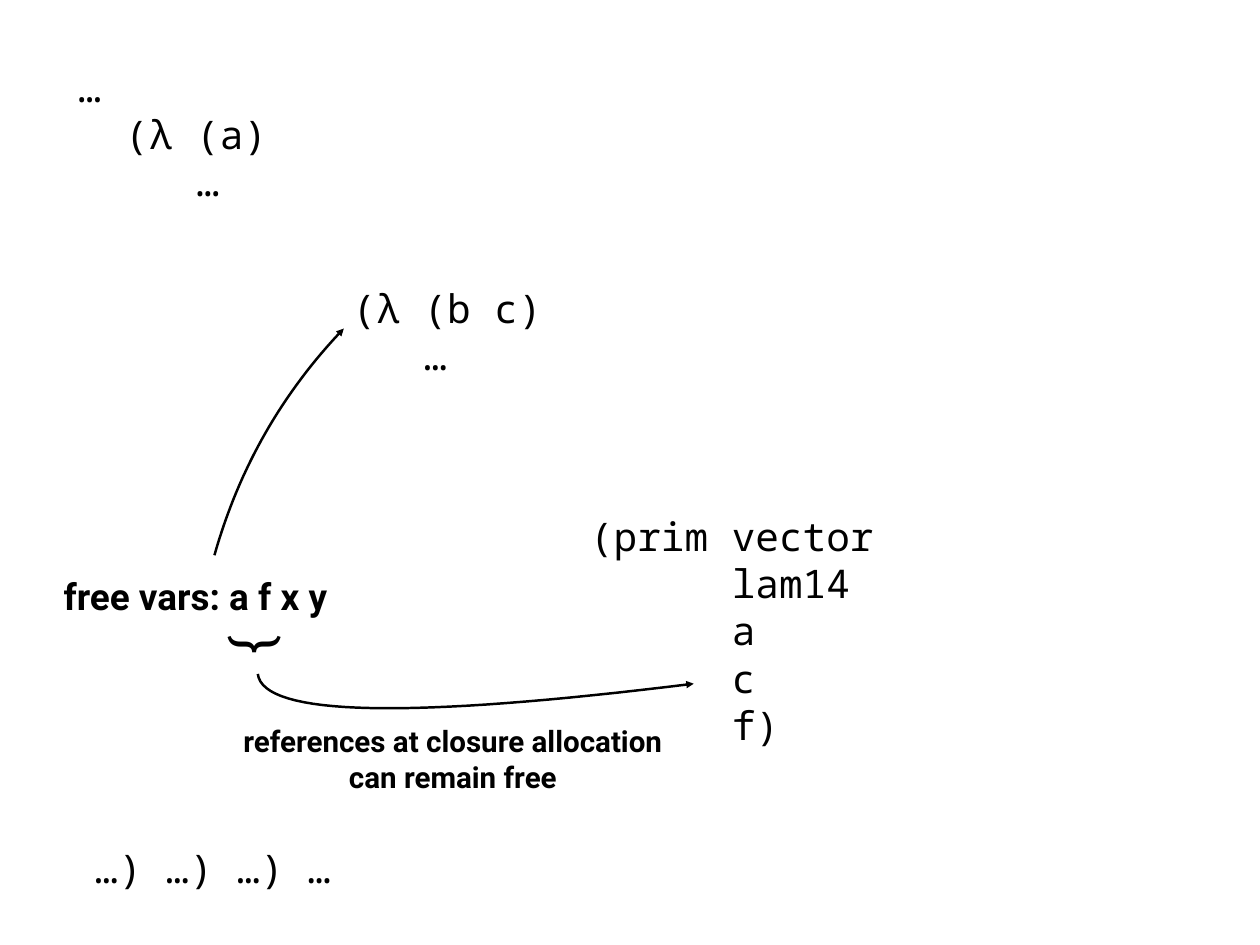
from lxml import etree
from pptx import Presentation, util as u
from pptx.dml.color import RGBColor
from pptx.enum import text
from pptx.oxml.ns import qn

WIDTH, HEIGHT = u.Inches(14.22), u.Inches(10.67)
COLORS = {"ink": "000000", "paper": "FFFFFF"}

FORMATS = {
    "code": {"name": "Noto Sans Mono", "size": u.Pt(32)},
    "label": {"name": "Roboto", "size": u.Pt(30), "bold": True},
    "caption": {"name": "Roboto", "size": u.Pt(24), "bold": True},
    "brace": {"name": "Roboto", "size": u.Pt(45)},
}

# Format, (left, top, width, height) in percent of the slide, rotation, lines
TEXTS = [
    ("code", (5.77, 6.09, 17.79, 15.09), 0, ["…", "  (λ (a)", "     …"]),
    ("code", (27.57, 29.52, 17.79, 10.4), 0, ["(λ (b c)", "   …"]),
    ("code", (46.41, 53.61, 30.87, 24.46), 0,
     ["(prim vector", "      lam14", "      a", "      c", "      f)"]),
    ("code", (7.1, 88.75, 19.62, 5.72), 0, ["…) …) …) …"]),
    ("label", (4.08, 60.17, 22.86, 5.72), 0, ["free vars: a f x y"]),
    ("brace", (18.57, 64.39, 2.32, 7.87), 269.8, ["{"]),
    ("caption", (17.58, 76.01, 36.71, 8.53), 0,
     ["references at closure allocation", "can remain free"]),
]

# Start, two control points and tip of each arrow, in percent of the slide
ARROWS = [
    [(17.02, 58.76), (18.99, 49.48), (22.43, 41.52), (27.29, 34.77)],
    [(20.46, 71.32), (20.89, 75.82), (32.42, 76.1), (55.06, 72.35)],
]
CURVE_STEPS = 32


def place(x, y):
    return round(x * WIDTH / 100), round(y * HEIGHT / 100)


def curve_point(points, t):
    weights = ((1 - t) ** 3, 3 * t * (1 - t) ** 2, 3 * t * t * (1 - t), t ** 3)
    return place(*(sum(w * p[axis] for w, p in zip(weights, points))
                   for axis in (0, 1)))


def add_text(slide, style, area, rotation, lines):
    box = slide.shapes.add_textbox(*place(*area[:2]), *place(*area[2:]))
    box.rotation = rotation
    frame = box.text_frame
    is_code = style == "code"
    settings = {
        "word_wrap": False,
        "auto_size": text.MSO_AUTO_SIZE.SHAPE_TO_FIT_TEXT,
        "vertical_anchor": (text.MSO_ANCHOR.TOP if is_code
                            else text.MSO_ANCHOR.MIDDLE),
    }
    settings.update({f"margin_{side}": u.Inches(0.06)
                     for side in ("left", "top", "right", "bottom")})
    for key, value in settings.items():
        setattr(frame, key, value)
    for number, line in enumerate(lines):
        paragraph = frame.add_paragraph() if number else frame.paragraphs[0]
        paragraph.alignment = (text.PP_ALIGN.LEFT if is_code
                               else text.PP_ALIGN.CENTER)
        run = paragraph.add_run()
        run.text = line
        for key, value in FORMATS[style].items():
            setattr(run.font, key, value)
        run.font.color.rgb = RGBColor.from_string(COLORS["ink"])


def add_arrow(slide, points):
    start, *rest = [curve_point(points, step / CURVE_STEPS)
                    for step in range(CURVE_STEPS + 1)]
    builder = slide.shapes.build_freeform(*start)
    builder.add_line_segments(rest, close=False)
    arrow = builder.convert_to_shape()
    arrow.shadow.inherit = False
    arrow.fill.background()
    arrow.line.width = u.Pt(2)
    arrow.line.color.rgb = RGBColor.from_string(COLORS["ink"])
    etree.SubElement(arrow.line._get_or_add_ln(), qn("a:tailEnd"),
                     type="triangle")


def main():
    deck = Presentation()
    deck.slide_width, deck.slide_height = WIDTH, HEIGHT
    slide = deck.slides.add_slide(deck.slide_layouts[6])
    slide.background.fill.solid()
    slide.background.fill.fore_color.rgb = RGBColor.from_string(COLORS["paper"])

    # Code fragments and their annotations
    for entry in TEXTS:
        add_text(slide, *entry)

    # Curved arrows from the free variables to their uses
    for points in ARROWS:
        add_arrow(slide, points)

    deck.save("out.pptx")


if __name__ == "__main__":
    main()
